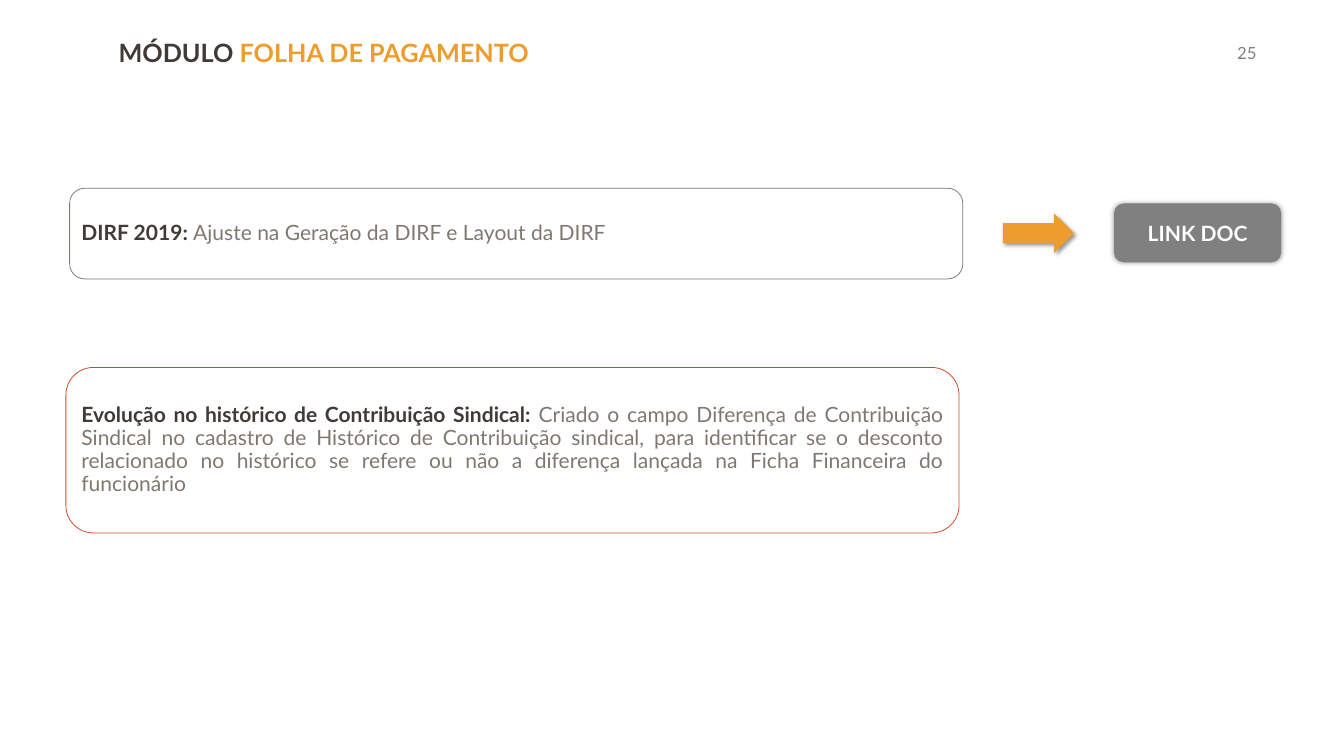
from dataclasses import dataclass
from typing import NamedTuple

from lxml.etree import SubElement
from pptx import Presentation
from pptx.dml.color import RGBColor
from pptx.enum.shapes import MSO_SHAPE as Preset
from pptx.enum.text import MSO_ANCHOR as Anchor, PP_ALIGN as Align
from pptx.oxml.ns import qn
from pptx.util import Inches, Pt


@dataclass(frozen=True)
class Theme:
    font: str = "Lato"
    dark: str = "403B37"
    gray: str = "7F7870"
    page_gray: str = "83807D"
    orange: str = "ED9C2E"
    red: str = "C84A23"
    button: str = "808080"
    white: str = "FFFFFF"
    shadow: str = "000000"
    title_size: int = 24
    text_size: int = 20
    page_size: int = 16


class Area(NamedTuple):
    left: float
    top: float
    width: float
    height: float


class Span(NamedTuple):
    text: str
    color: str
    bold: bool = False


class Shadow(NamedTuple):
    blur: float
    distance: float
    angle: int


@dataclass(frozen=True)
class Card:
    left: float
    top: float
    height: float
    outline: str
    heading: str
    detail: str


THEME = Theme()
WIDTH, HEIGHT = Inches(17.77), Inches(10)
CARD_WIDTH = 66.46

CARDS = (
    Card(4.9, 48.6, 21.9, THEME.red, "Evolução no histórico de Contribuição Sindical: ",
         "Criado o campo Diferença de Contribuição Sindical no cadastro de Histórico de "
         "Contribuição sindical, para identificar se o desconto relacionado no histórico se "
         "refere ou não a diferença lançada na Ficha Financeira do funcionário"),
    Card(5.18, 24.9, 12, THEME.gray, "DIRF 2019: ",
         "Ajuste na Geração da DIRF e Layout da DIRF"),
)


def place(area: Area) -> tuple[int, int, int, int]:
    return (int(WIDTH * area.left / 100), int(HEIGHT * area.top / 100),
            int(WIDTH * area.width / 100), int(HEIGHT * area.height / 100))


def write(frame, spans: tuple[Span, ...], size: int, align=Align.LEFT,
          anchor=Anchor.TOP, wrap: bool = True, spacing: float = 1.0) -> None:
    frame.word_wrap = wrap
    frame.vertical_anchor = anchor
    paragraph = frame.paragraphs[0]
    paragraph.alignment = align
    paragraph.line_spacing = spacing
    for span in spans:
        run = paragraph.add_run()
        run.text = span.text
        run.font.name = THEME.font
        run.font.size = Pt(size)
        run.font.bold = span.bold
        run.font.color.rgb = RGBColor.from_string(span.color)


def add_label(slide, area: Area, spans: tuple[Span, ...], size: int, wrap: bool = True) -> None:
    label = slide.shapes.add_textbox(*place(area))
    write(label.text_frame, spans, size, wrap=wrap)


def add_card(slide, card: Card) -> None:
    area = Area(card.left, card.top, CARD_WIDTH, card.height)
    box = slide.shapes.add_shape(Preset.ROUNDED_RECTANGLE, *place(area))
    box.shadow.inherit = False
    box.fill.background()
    box.line.color.rgb = RGBColor.from_string(card.outline)
    box.line.width = Pt(0.75)
    spans = (Span(card.heading, THEME.dark, True), Span(card.detail, THEME.gray))
    write(box.text_frame, spans, THEME.text_size, Align.JUSTIFY, Anchor.MIDDLE, spacing=0.9)


def add_raised(slide, preset: Preset, area: Area, fill: str, shadow: Shadow):
    raised = slide.shapes.add_shape(preset, *place(area))
    raised.fill.solid()
    raised.fill.fore_color.rgb = RGBColor.from_string(fill)
    raised.line.fill.background()
    raised.shadow.inherit = False
    effects = raised.element.spPr.find(qn("a:effectLst"))
    outer = SubElement(effects, qn("a:outerShdw"), blurRad=str(Pt(shadow.blur)),
                       dist=str(Pt(shadow.distance)), dir=str(shadow.angle * 60000),
                       algn="ctr", rotWithShape="0")
    tint = SubElement(outer, qn("a:srgbClr"), val=THEME.shadow)
    SubElement(tint, qn("a:alpha"), val="40000")
    return raised


def main() -> None:
    deck = Presentation()
    deck.slide_width, deck.slide_height = WIDTH, HEIGHT
    slide = deck.slides.add_slide(deck.slide_layouts[6])

    add_label(slide, Area(91.5, 5.2, 3.43, 3.7), (Span("25", THEME.page_gray),),
              THEME.page_size, wrap=False)
    add_label(slide, Area(8.27, 4.4, 80.81, 5.1),
              (Span("MÓDULO ", THEME.dark, True),
               Span("FOLHA DE PAGAMENTO", THEME.orange, True)), THEME.title_size)
    for card in CARDS:
        add_card(slide, card)
    add_raised(slide, Preset.RIGHT_ARROW, Area(74.62, 28.2, 5.29, 5.3),
               THEME.orange, Shadow(4, 3, 45))
    link = add_raised(slide, Preset.ROUNDED_RECTANGLE, Area(82.89, 26.9, 12.44, 7.8),
                      THEME.button, Shadow(5, 0, 0))
    write(link.text_frame, (Span("LINK DOC", THEME.white, True),),
          THEME.text_size, Align.CENTER, Anchor.MIDDLE)
    deck.save("out.pptx")


if __name__ == "__main__":
    main()
